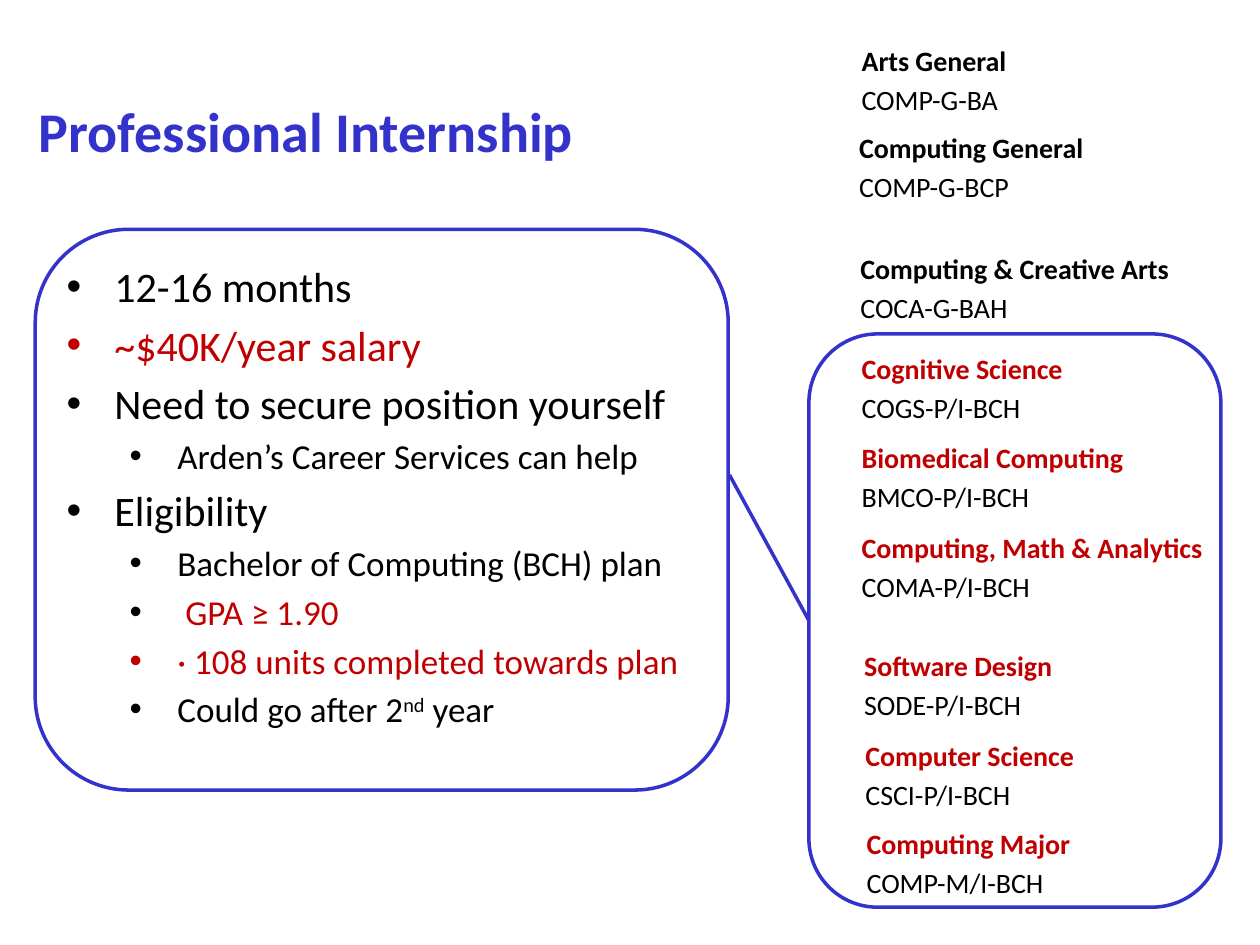
from dataclasses import dataclass

import pptx
import pptx.dml.color
import pptx.enum.shapes
import pptx.enum.text
import pptx.oxml.ns
import pptx.util
from lxml import etree

Inches = pptx.util.Inches
Pt = pptx.util.Pt

COLORS = {"blue": "3333CC", "red": "C00000", "black": "000000"}
FONT = "Calibri"
SPACE_RATIO = 0.19  # space before a paragraph, as a share of its text size


@dataclass
class Program:
    left: float
    top: float
    width: float
    name: str
    code: str
    color: str = "red"


@dataclass
class Span:
    text: str
    color: str = "black"
    superscript: bool = False


@dataclass
class Bullet:
    spans: list[Span]
    level: int = 0


PROGRAMS = [
    Program(6.74, 0.3, 1.37, "Arts General", "COMP-G-BA", "black"),
    Program(6.72, 0.99, 2.01, "Computing General", "COMP-G-BCP", "black"),
    Program(6.73, 1.95, 2.69, "Computing & Creative Arts", "COCA-G-BAH", "black"),
    Program(6.74, 2.74, 1.82, "Cognitive Science", "COGS-P/I-BCH"),
    Program(6.74, 3.45, 2.31, "Biomedical Computing", "BMCO-P/I-BCH"),
    Program(6.74, 4.16, 2.95, "Computing, Math & Analytics", "COMA-P/I-BCH"),
    Program(6.76, 5.1, 1.72, "Software Design", "SODE-P/I-BCH"),
    Program(6.77, 5.81, 1.88, "Computer Science", "CSCI-P/I-BCH"),
    Program(6.78, 6.51, 1.84, "Computing Major", "COMP-M/I-BCH"),
]

BULLETS = [
    Bullet([Span("12-16 months")]),
    Bullet([Span("~$40K/year salary", "red")]),
    Bullet([Span("Need to secure position yourself")]),
    Bullet([Span("Arden’s Career Services can help")], 1),
    Bullet([Span("Eligibility")]),
    Bullet([Span("Bachelor of Computing (BCH) plan")], 1),
    Bullet([Span(" "), Span("GPA ≥ 1.90", "red")], 1),
    Bullet([Span("· 108 units completed towards plan", "red")], 1),
    Bullet([Span("Could go after 2"), Span("nd", superscript=True), Span(" year")], 1),
]
BULLET_SIZES = [24, 20]
BULLET_MARGINS = [0.38, 0.88]
BULLET_HANGING = 0.38


def rgb(color: str) -> pptx.dml.color.RGBColor:
    return pptx.dml.color.RGBColor.from_string(COLORS[color])


def add_text_frame(slide, left: float, top: float, width: float, height: float,
                   wrap: bool = True):
    box = slide.shapes.add_textbox(Inches(left), Inches(top), Inches(width), Inches(height))
    box.text_frame.word_wrap = wrap
    return box.text_frame


def add_paragraph(frame, index: int, size: float):
    paragraph = frame.paragraphs[0] if index == 0 else frame.add_paragraph()
    paragraph.space_before = Pt(round(size * SPACE_RATIO, 1))
    return paragraph


def add_run(paragraph, text: str, size: float, color: str, bold: bool = False):
    run = paragraph.add_run()
    run.text = text
    run.font.name = FONT
    run.font.size = Pt(size)
    run.font.bold = bold
    run.font.color.rgb = rgb(color)
    return run


def add_title(slide, text: str) -> None:
    frame = add_text_frame(slide, 0.21, 0.75, 5.34, 0.56)
    frame.vertical_anchor = pptx.enum.text.MSO_ANCHOR.MIDDLE
    add_run(frame.paragraphs[0], text, 32, "blue", bold=True)


def add_bullets(slide, bullets: list[Bullet]) -> None:
    frame = add_text_frame(slide, 0.43, 2.02, 5.43, 3.98)
    for index, bullet in enumerate(bullets):
        size = BULLET_SIZES[bullet.level]
        paragraph = add_paragraph(frame, index, size)
        paragraph.level = bullet.level
        properties = paragraph._p.get_or_add_pPr()
        properties.set("marL", str(Inches(BULLET_MARGINS[bullet.level])))
        properties.set("indent", str(-Inches(BULLET_HANGING)))
        bullet_font = etree.SubElement(properties, pptx.oxml.ns.qn("a:buFont"))
        bullet_font.set("typeface", "Arial")
        etree.SubElement(properties, pptx.oxml.ns.qn("a:buChar")).set("char", "•")
        for span in bullet.spans:
            run = add_run(paragraph, span.text, size, span.color)
            if span.superscript:
                run.font._element.set("baseline", "30000")


def add_program(slide, program: Program) -> None:
    frame = add_text_frame(slide, program.left, program.top, program.width, 0.69, wrap=False)
    add_run(add_paragraph(frame, 0, 16), program.name, 16, program.color, bold=True)
    add_run(add_paragraph(frame, 1, 16), program.code, 16, "black")


def style_line(line) -> None:
    line.color.rgb = rgb("blue")
    line.width = Pt(2)


def add_outline(slide, left: float, top: float, width: float, height: float):
    shape = slide.shapes.add_shape(
        pptx.enum.shapes.MSO_SHAPE.ROUNDED_RECTANGLE,
        Inches(left), Inches(top), Inches(width), Inches(height))
    shape.shadow.inherit = False
    shape.fill.background()
    style_line(shape.line)
    return shape


def add_link(slide, target) -> None:
    connector = slide.shapes.add_connector(
        pptx.enum.shapes.MSO_CONNECTOR.STRAIGHT,
        Inches(5.79), Inches(3.77), Inches(6.42), Inches(4.92))
    connector.end_connect(target, 1)
    style_line(connector.line)
    etree.SubElement(connector._element.spPr, pptx.oxml.ns.qn("a:effectLst"))


def main() -> None:
    presentation = pptx.Presentation()
    presentation.slide_width = Inches(10)
    presentation.slide_height = Inches(7.5)
    slide = presentation.slides.add_slide(presentation.slide_layouts[6])

    # Title and internship facts
    add_title(slide, "Professional Internship")
    add_outline(slide, 0.28, 1.82, 5.5, 4.45)
    add_bullets(slide, BULLETS)

    # Eligible plans, linked to the facts
    eligible_plans = add_outline(slide, 6.42, 2.65, 3.27, 4.55)
    add_link(slide, eligible_plans)

    # Program names and codes
    for program in PROGRAMS:
        add_program(slide, program)

    presentation.save("out.pptx")


if __name__ == "__main__":
    main()
